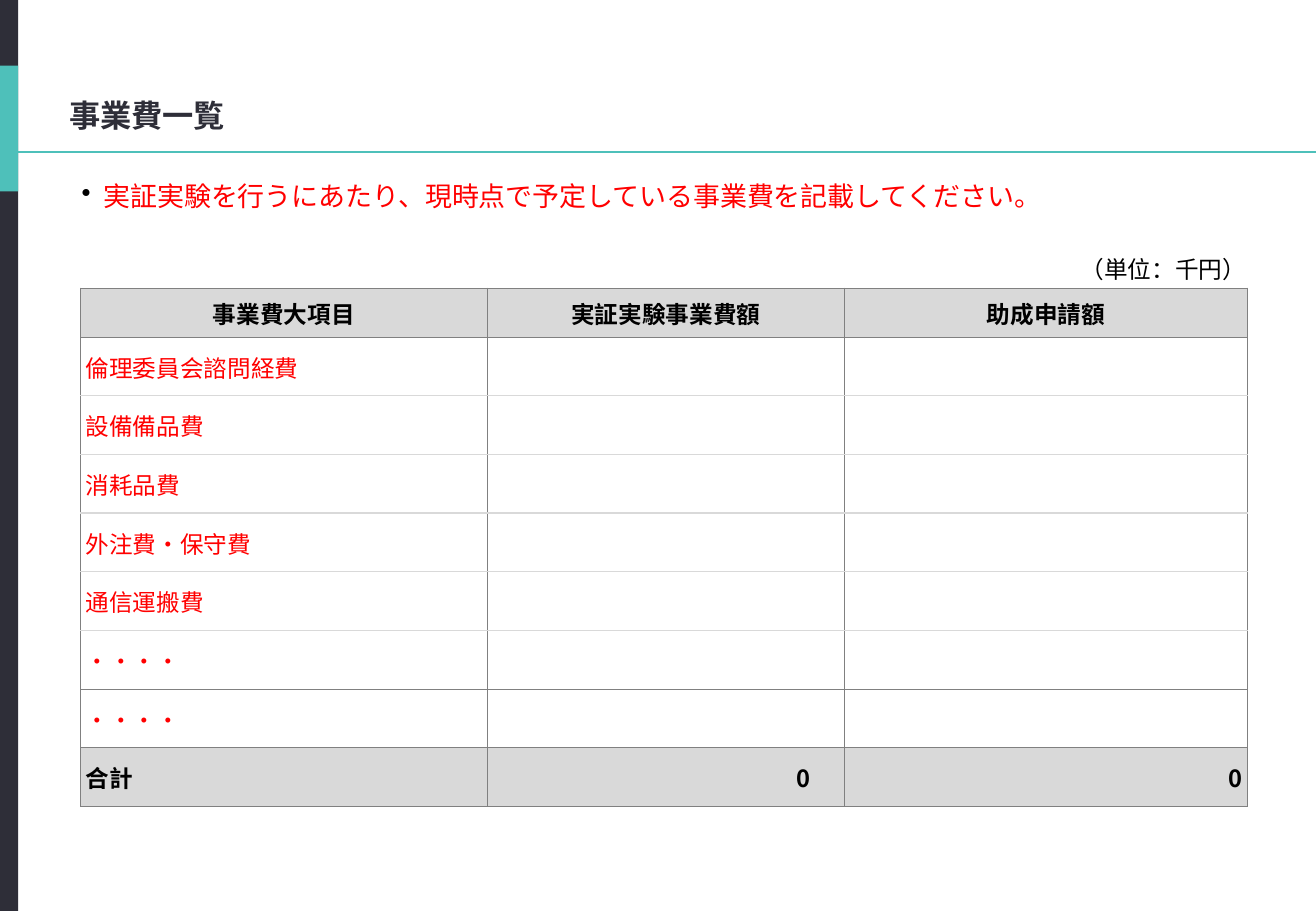
from lxml import etree
from pptx import Presentation
from pptx.dml.color import RGBColor
from pptx.enum import shapes, text
from pptx.oxml import ns
from pptx.util import Pt

TITLE = "事業費一覧"
GUIDE = "実証実験を行うにあたり、現時点で予定している事業費を記載してください。"
UNIT = "（単位：千円）"
HEADERS = ("事業費大項目", "実証実験事業費額", "助成申請額")
ITEMS = ("倫理委員会諮問経費", "設備備品費", "消耗品費", "外注費・保守費",
         "通信運搬費", "・・・・", "・・・・")
TOTALS = ("合計", "0", "0")

COLORS = {"dark": "2E2E38", "teal": "4EC0BA", "red": "FF0000", "black": "000000",
          "head": "D9D9D9", "grid": "808080", "light": "D9D9D9"}
LATIN, CJK = "Lato", "Noto Sans CJK JP"
WIDTH, HEIGHT = 780, 540
BAR_WIDTH = 10.8
TABLE_LEFT, TABLE_TOP = 47.7, 146.2
COLUMN_WIDTHS = (241.2, 211.7, 238.9)
ITEM_HEIGHT = 34.8
ROW_HEIGHTS = (24.5, 29) + (ITEM_HEIGHT,) * (len(ITEMS) + 1)
LIGHT_RULES = range(3, 8)
TOTAL_RIGHT_MARGINS = (0.7, 20.5, 2.9)

LEFT, CENTER, RIGHT = text.PP_ALIGN.LEFT, text.PP_ALIGN.CENTER, text.PP_ALIGN.RIGHT


def rgb(name):
    return RGBColor.from_string(COLORS[name])


def style(paragraph, size, color, bold=False, font=CJK, align=LEFT):
    paragraph.alignment = align
    paragraph.font.size = Pt(size)
    paragraph.font.bold = bold
    paragraph.font.color.rgb = rgb(color)
    paragraph.font.name = font
    for run in paragraph.runs:
        run.font.name = font
        east_asian = etree.SubElement(run.font._element, ns.qn("a:ea"))
        east_asian.set("typeface", CJK)


def set_margins(box, left=0, top=0, right=0, bottom=0):
    box.margin_left, box.margin_top = Pt(left), Pt(top)
    box.margin_right, box.margin_bottom = Pt(right), Pt(bottom)


def add_bar(slide, top, height, color):
    bar = slide.shapes.add_shape(shapes.MSO_SHAPE.RECTANGLE, 0, Pt(top),
                                 Pt(BAR_WIDTH), Pt(height))
    bar.shadow.inherit = False
    bar.fill.solid()
    bar.fill.fore_color.rgb = rgb(color)
    bar.line.fill.background()


def add_frame(slide):
    add_bar(slide, 0, HEIGHT, "dark")
    add_bar(slide, 38.9, 74.6, "teal")
    rule = slide.shapes.add_connector(shapes.MSO_CONNECTOR.STRAIGHT,
                                      0, Pt(90.2), Pt(WIDTH), Pt(90.2))
    rule.line.color.rgb = rgb("teal")
    rule.line.width = Pt(1.5)
    etree.SubElement(rule._element.spPr, ns.qn("a:effectLst"))


def add_title(slide):
    title = slide.shapes.title
    title.left, title.top, title.width, title.height = map(Pt, (41, 38.9, 698.4, 41.8))
    frame = title.text_frame
    frame.text = TITLE
    frame.auto_size = text.MSO_AUTO_SIZE.NONE
    frame.vertical_anchor = text.MSO_ANCHOR.TOP
    set_margins(frame, top=18.4)
    style(frame.paragraphs[0], 18.5, "dark", bold=True, font=LATIN)


def add_guide(slide):
    box = slide.shapes.add_textbox(Pt(48.4), Pt(108.7), Pt(698.4), Pt(30))
    frame = box.text_frame
    frame.word_wrap = True
    set_margins(frame)
    paragraph = frame.paragraphs[0]
    paragraph.text = GUIDE
    paragraph.line_spacing = 0.9
    style(paragraph, 16, "red")
    properties = paragraph._p.get_or_add_pPr()
    properties.set("marL", str(Pt(13)))
    properties.set("indent", str(Pt(-13)))
    bullet_color = etree.Element(ns.qn("a:buClr"))
    etree.SubElement(bullet_color, ns.qn("a:srgbClr")).set("val", COLORS["black"])
    bullet = etree.Element(ns.qn("a:buChar"))
    bullet.set("char", "•")
    position = list(properties).index(properties.find(ns.qn("a:defRPr")))
    properties.insert(position, bullet_color)
    properties.insert(position + 1, bullet)


def set_borders(cell, row):
    """Draw the cell's edges; the unit row has only its lower rule."""
    def rule(index):
        if index == 0:
            return None
        return ("light", 1) if index in LIGHT_RULES else ("grid", 0.5)

    side = ("grid", 0.5) if row else None
    edges = {"lnL": side, "lnR": side, "lnT": rule(row), "lnB": rule(row + 1)}
    properties = cell._tc.get_or_add_tcPr()
    for position, (tag, edge) in enumerate(edges.items()):
        line = etree.Element(ns.qn(f"a:{tag}"))
        if edge:
            color, width = edge
            line.set("w", str(Pt(width)))
            fill = etree.SubElement(line, ns.qn("a:solidFill"))
            etree.SubElement(fill, ns.qn("a:srgbClr")).set("val", COLORS[color])
        else:
            etree.SubElement(line, ns.qn("a:noFill"))
        properties.insert(position, line)


def fill_cell(cell, row, column, content, last_row):
    is_header, is_total = row == 1, row == last_row
    is_item = 1 < row < last_row
    if is_header or is_total:
        cell.fill.solid()
        cell.fill.fore_color.rgb = rgb("head")
    else:
        cell.fill.background()
    set_borders(cell, row)
    cell.vertical_anchor = text.MSO_ANCHOR.MIDDLE
    set_margins(cell, left=2.9 if row > 1 else 0.7, top=0.7,
                right=TOTAL_RIGHT_MARGINS[column] if is_total else 0.7)
    cell.text = content
    align = CENTER if is_header else RIGHT if column else LEFT
    style(cell.text_frame.paragraphs[0], 14, "red" if is_item else "black",
          bold=is_header or is_total, font=LATIN if is_item else CJK, align=align)


def add_cost_table(slide):
    rows = [("", "", UNIT), HEADERS, *((item, "", "") for item in ITEMS), TOTALS]
    graphic = slide.shapes.add_table(len(rows), len(HEADERS), Pt(TABLE_LEFT), Pt(TABLE_TOP),
                                     Pt(sum(COLUMN_WIDTHS)), Pt(sum(ROW_HEIGHTS)))
    table = graphic.table
    table.first_row = table.horz_banding = False
    for column, width in zip(table.columns, COLUMN_WIDTHS):
        column.width = Pt(width)
    for row, height in zip(table.rows, ROW_HEIGHTS):
        row.height = Pt(height)
    for row, contents in enumerate(rows):
        for column, content in enumerate(contents):
            fill_cell(table.cell(row, column), row, column, content, len(rows) - 1)


def main():
    presentation = Presentation()
    presentation.slide_width, presentation.slide_height = Pt(WIDTH), Pt(HEIGHT)
    slide = presentation.slides.add_slide(presentation.slide_layouts[5])
    add_frame(slide)
    add_title(slide)
    add_guide(slide)
    add_cost_table(slide)
    presentation.save("out.pptx")


if __name__ == "__main__":
    main()
